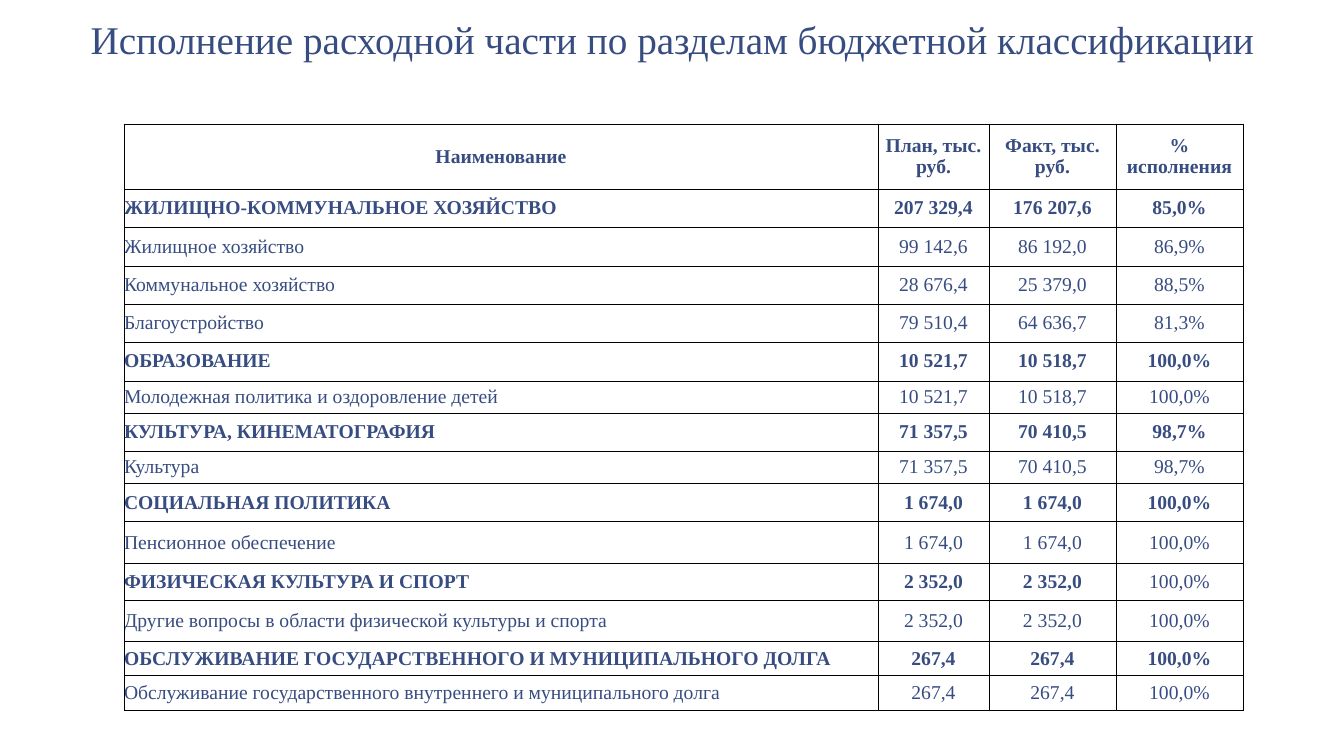
from lxml import etree
from pptx import Presentation, util as u
from pptx.dml.color import RGBColor
from pptx.enum import text as t
from pptx.oxml import ns

PX = 12192000 / 1344
FONT, INK, LINE = "Times New Roman", "374C81", "000000"

TITLE = "Исполнение расходной части по разделам бюджетной классификации"
COLS = [754, 111, 127, 127]
ROWS = [65, 38, 39, 38, 38, 39, 32, 38, 33, 38, 42, 37, 41, 34, 35]
HEAD = ("Наименование", "План, тыс. руб.", "Факт, тыс. руб.", "% исполнения")
SPORT = "ФИЗИЧЕСКАЯ КУЛЬТУРА И СПОРТ"
DATA = [
    ("ЖИЛИЩНО-КОММУНАЛЬНОЕ ХОЗЯЙСТВО", "207 329,4", "176 207,6", "85,0%"),
    ("Жилищное хозяйство", "99 142,6", "86 192,0", "86,9%"),
    ("Коммунальное хозяйство", "28 676,4", "25 379,0", "88,5%"),
    ("Благоустройство", "79 510,4", "64 636,7", "81,3%"),
    ("ОБРАЗОВАНИЕ", "10 521,7", "10 518,7", "100,0%"),
    ("Молодежная политика и оздоровление детей", "10 521,7", "10 518,7", "100,0%"),
    ("КУЛЬТУРА, КИНЕМАТОГРАФИЯ", "71 357,5", "70 410,5", "98,7%"),
    ("Культура", "71 357,5", "70 410,5", "98,7%"),
    ("СОЦИАЛЬНАЯ ПОЛИТИКА", "1 674,0", "1 674,0", "100,0%"),
    ("Пенсионное обеспечение", "1 674,0", "1 674,0", "100,0%"),
    (SPORT, "2 352,0", "2 352,0", "100,0%"),
    ("Другие вопросы в области физической культуры и спорта", "2 352,0", "2 352,0", "100,0%"),
    ("ОБСЛУЖИВАНИЕ ГОСУДАРСТВЕННОГО И МУНИЦИПАЛЬНОГО ДОЛГА", "267,4", "267,4", "100,0%"),
    ("Обслуживание государственного внутреннего и муниципального долга", "267,4", "267,4", "100,0%"),
]


def px(n):
    return u.Emu(round(n * PX))


def color(code):
    return RGBColor.from_string(code)


def write(frame, words, size=14, bold=False, left=False, space=1.0):
    frame.word_wrap = True
    para = frame.paragraphs[0]
    para.alignment = t.PP_ALIGN.LEFT if left else t.PP_ALIGN.CENTER
    para.line_spacing = space
    run = para.add_run()
    run.text = words
    run.font.name = FONT
    run.font.size = u.Pt(size)
    run.font.bold = bold
    run.font.color.rgb = color(INK)


def border(cell):
    """Draw a thin line on all four sides of the cell."""
    props = cell._tc.get_or_add_tcPr()
    for side in "LRTB":
        line = etree.SubElement(props, ns.qn("a:ln" + side), w=str(u.Pt(0.5)))
        fill = etree.SubElement(line, ns.qn("a:solidFill"))
        etree.SubElement(fill, ns.qn("a:srgbClr"), val=LINE)


def title(slide, x, y, w, h):
    frame = slide.shapes.add_textbox(px(x), px(y), px(w), px(h)).text_frame
    frame.vertical_anchor = t.MSO_ANCHOR.MIDDLE
    frame.margin_left = frame.margin_right = px(13)
    frame.margin_top = frame.margin_bottom = px(7)
    write(frame, TITLE, size=28, space=0.85)


def budget(slide, x, y):
    """Place the table with its top left corner at x, y."""
    table = slide.shapes.add_table(len(ROWS), len(COLS), px(x), px(y),
                                   px(sum(COLS)), px(sum(ROWS))).table
    table.first_row = table.horz_banding = False
    for col, wide in zip(table.columns, COLS):
        col.width = px(wide)
    for row, high, line in zip(table.rows, ROWS, [HEAD] + DATA):
        row.height = px(high)
        for i, (cell, words) in enumerate(zip(row.cells, line)):
            cell.margin_left = cell.margin_right = 0
            cell.margin_top = cell.margin_bottom = 0
            cell.vertical_anchor = t.MSO_ANCHOR.MIDDLE
            border(cell)
            cell.fill.background()
            plain = line[0] == SPORT and i == 3
            bold = line is HEAD or (line[0].isupper() and not plain)
            write(cell.text_frame, words, bold=bold,
                  left=i == 0 and line is not HEAD)


def main():
    deck = Presentation()
    deck.slide_width, deck.slide_height = px(1344), px(756)
    slide = deck.slides.add_slide(deck.slide_layouts[6])
    title(slide, 0, 10, 1344, 64)
    budget(slide, 124, 124)
    deck.save("out.pptx")


if __name__ == "__main__":
    main()
